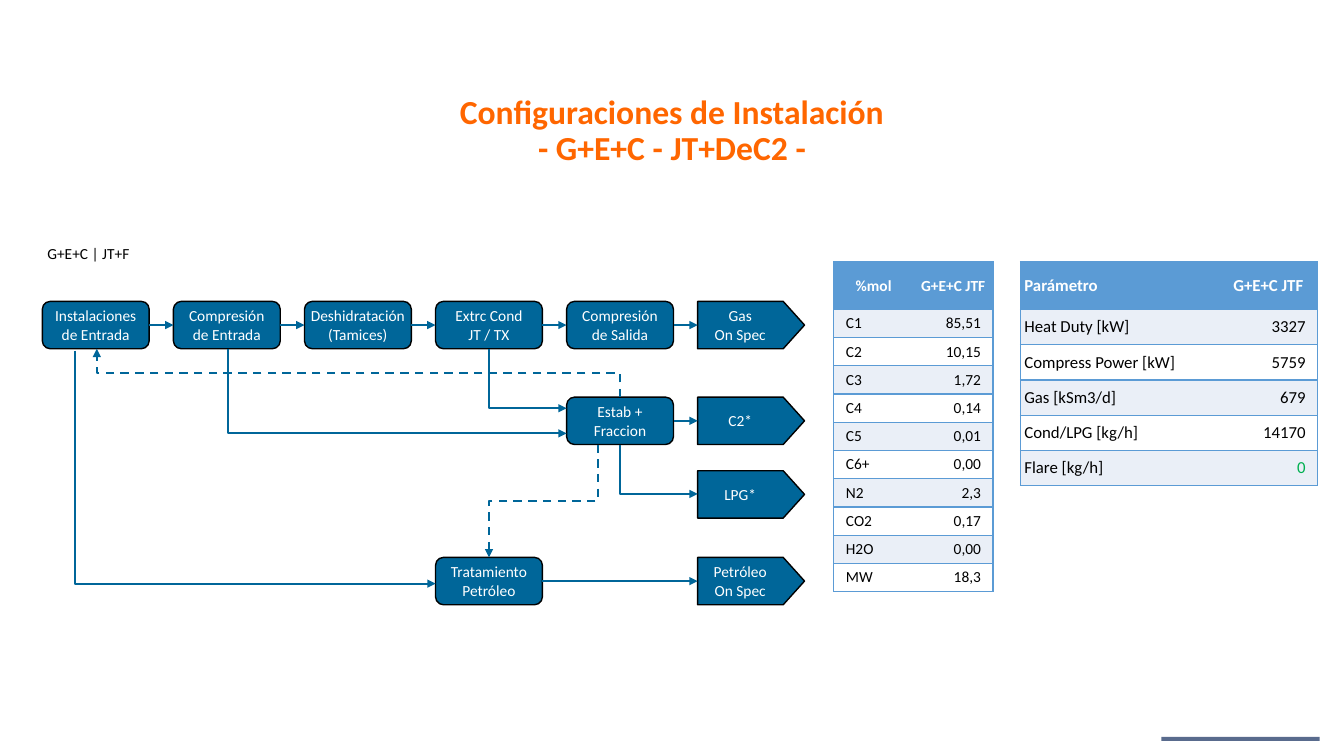
import dataclasses

import lxml.etree
import pptx
import pptx.dml.color
import pptx.enum.dml
import pptx.enum.shapes
import pptx.enum.text
import pptx.oxml.ns
import pptx.util

Inches = pptx.util.Inches
Pt = pptx.util.Pt
Shape = pptx.enum.shapes.MSO_SHAPE
Link = pptx.enum.shapes.MSO_CONNECTOR
Align = pptx.enum.text.PP_ALIGN
Anchor = pptx.enum.text.MSO_ANCHOR
qn = pptx.oxml.ns.qn


def rgb(code):
    return pptx.dml.color.RGBColor.from_string(code)


@dataclasses.dataclass(frozen=True)
class Theme:
    font: str = "Calibri"
    title: str = "FF6600"
    flow: str = "006699"
    edge: str = "000000"
    ink: str = "000000"
    paper: str = "FFFFFF"
    head: str = "5B9BD5"
    band: str = "EAEFF7"
    good: str = "00B050"
    bar: str = "001C50"
    big: int = 24
    mid: int = 12
    small: int = 11


THEME = Theme()
NO_GRID = "{2D5ABB26-0587-4C30-8999-92F81FD0307C}"
BOX_W, BOX_H = 1.06, 0.47
COLS = [0.42 + 1.3 * i for i in range(6)]
TOP = 2.99
PAD = 0.04

MOLAR = [("%mol", "G+E+C JTF"), ("C1", "85,51"), ("C2", "10,15"), ("C3", "1,72"),
         ("C4", "0,14"), ("C5", "0,01"), ("C6+", "0,00"), ("N2", "2,3"),
         ("CO2", "0,17"), ("H2O", "0,00"), ("MW", "18,3")]
PARAMS = [("Parámetro", "G+E+C JTF"), ("Heat Duty [kW]", "3327"),
          ("Compress Power [kW]", "5759"), ("Gas [kSm3/d]", "679"),
          ("Cond/LPG [kg/h]", "14170"), ("Flare [kg/h]", "0")]


def put(obj, vals):
    """Set each named attribute of obj."""
    for name, val in vals.items():
        setattr(obj, name, val)


def pads(left=PAD, top=PAD, right=PAD, base=PAD):
    return {"margin_left": Inches(left), "margin_top": Inches(top),
            "margin_right": Inches(right), "margin_bottom": Inches(base)}


def write(frame, text, size, color, align, bold=False, space=None):
    frame.text = text
    for para in frame.paragraphs:
        put(para, {"alignment": align, "line_spacing": space})
        for run in para.runs:
            put(run.font, {"name": THEME.font, "size": Pt(size), "bold": bold})
            run.font.color.rgb = rgb(color)


def paint(shape, color):
    shape.shadow.inherit = False
    shape.fill.solid()
    shape.fill.fore_color.rgb = rgb(color)


def title(slide, text):
    box = slide.shapes.add_textbox(Inches(0.76), Inches(0.91), Inches(11.81), Inches(0.79))
    put(box.text_frame, {"word_wrap": True, "vertical_anchor": Anchor.MIDDLE,
                         **pads(0.08, 0.04, 0.08, 0.04)})
    write(box.text_frame, text, THEME.big, THEME.title, Align.CENTER, True, 0.9)


def bar(slide):
    strip = slide.shapes.add_shape(Shape.RECTANGLE, Inches(11.52), Inches(7.31),
                                   Inches(1.57), Inches(0.04))
    paint(strip, THEME.bar)
    strip.line.fill.background()
    color = strip._element.spPr.find(".//" + qn("a:srgbClr"))
    lxml.etree.SubElement(color, qn("a:alpha"), val="65000")


def node(slide, kind, left, top, text, right=PAD):
    shape = slide.shapes.add_shape(kind, Inches(left), Inches(top),
                                   Inches(BOX_W), Inches(BOX_H))
    paint(shape, THEME.flow)
    shape.line.color.rgb = rgb(THEME.edge)
    shape.line.width = Pt(1)
    put(shape.text_frame, {"word_wrap": True, "vertical_anchor": Anchor.MIDDLE,
                           **pads(right=right)})
    write(shape.text_frame, text, THEME.small, THEME.paper, Align.CENTER)
    return shape


def step(slide, left, top, text):
    return node(slide, Shape.FLOWCHART_ALTERNATE_PROCESS, left, top, text)


def goal(slide, top, text):
    """Add a product tag that points right."""
    tag = node(slide, Shape.PENTAGON, COLS[5], top, text, 0.15)
    tag.adjustments[0] = 0.45
    return tag


def style(line, dash=False):
    line.line.color.rgb = rgb(THEME.flow)
    line.line.width = Pt(1.5)
    if dash:
        line.line.dash_style = pptx.enum.dml.MSO_LINE.DASH
    props = line._element.spPr
    lxml.etree.SubElement(props.find(qn("a:ln")), qn("a:tailEnd"), type="triangle")
    lxml.etree.SubElement(props, qn("a:effectLst"))


def arrow(slide, start, end):
    line = slide.shapes.add_connector(Link.STRAIGHT, 0, 0, 0, 0)
    line.begin_connect(start, 3)
    line.end_connect(end, 1)
    style(line)


def elbow(slide, x1, y1, x2, y2, dash=False):
    """Add an arrow that leaves vertically; a dashed one turns twice."""
    line = slide.shapes.add_connector(Link.ELBOW, 0, 0, 0, 0)
    wide, high = abs(y2 - y1), abs(x2 - x1)
    put(line, {"left": Inches((x1 + x2 - wide) / 2), "top": Inches((y1 + y2 - high) / 2),
               "width": Inches(wide), "height": Inches(high)})
    turns = {(True, True): {"rot": 270, "flipH": True},
             (True, False): {"rot": 90},
             (False, False): {"rot": 270, "flipV": True}}
    props = line._element.spPr
    put(props.xfrm, turns[y2 > y1, x2 > x1])
    if not dash:
        props.find(qn("a:prstGeom")).set("prst", "bentConnector2")
    style(line, dash)


def table(slide, left, top, cols, rows):
    frame = slide.shapes.add_table(len(rows), len(cols), Inches(left), Inches(top),
                                   Inches(sum(cols)), Inches(sum(rows)))
    grid = frame.table
    put(grid, {"first_row": False, "horz_banding": False})
    grid._tbl.tblPr.find(qn("a:tableStyleId")).text = NO_GRID
    for col, wide in zip(grid.columns, cols):
        col.width = Inches(wide)
    for row, high in zip(grid.rows, rows):
        row.height = Inches(high)
    return grid


def fill(cell, text, back, size, color, align, edge=PAD, right=PAD, bold=False, sides=""):
    for side in sides:
        line = lxml.etree.SubElement(cell._tc.get_or_add_tcPr(), qn("a:ln" + side),
                                     w=str(Pt(1)))
        solid = lxml.etree.SubElement(line, qn("a:solidFill"))
        lxml.etree.SubElement(solid, qn("a:srgbClr"), val=THEME.head)
    cell.fill.solid()
    cell.fill.fore_color.rgb = rgb(back)
    put(cell, {"vertical_anchor": Anchor.MIDDLE, **pads(left=edge, right=right)})
    write(cell.text_frame, text, size, color, align, bold)


def report(slide, left, cols, high, data, size, first, edge, marks=()):
    """Add a two-column table; first aligns its top left cell, marks are green rows."""
    grid = table(slide, left, 2.6, cols, [BOX_H] + [high] * (len(data) - 1))
    for r, row in enumerate(data):
        for c, text in enumerate(row):
            cell, sides = grid.cell(r, c), ("LTB", "RTB")[c]
            if r == 0:
                fill(cell, text, THEME.head, size, THEME.paper,
                     (first, Align.CENTER)[c], bold=True, sides=sides)
                continue
            fill(cell, text, THEME.band if r % 2 else THEME.paper, size,
                 THEME.good if c and r in marks else THEME.ink,
                 (Align.LEFT, Align.RIGHT)[c], edge, (edge, 0.12)[c], sides=sides)


def flow(slide):
    names = ["Instalaciones de Entrada", "Compresión de Entrada",
             "Deshidratación\v(Tamices)", "Extrc Cond\nJT / TX", "Compresión de Salida"]
    chain = [step(slide, x, TOP, name) for x, name in zip(COLS, names)]
    chain.append(goal(slide, TOP, "Gas\nOn Spec"))
    for pair in zip(chain, chain[1:]):
        arrow(slide, *pair)
    split = step(slide, COLS[4], 3.94, "Estab + Fraccion")
    arrow(slide, split, goal(slide, 3.94, "C2*"))
    goal(slide, 4.67, "LPG*")
    crude = step(slide, COLS[3], 5.53, "Tratamiento Petróleo")
    arrow(slide, crude, goal(slide, 5.53, "Petróleo\nOn Spec"))
    elbow(slide, 2.26, 3.46, 5.62, 4.3)
    elbow(slide, 4.85, 3.46, 5.62, 4.05)
    elbow(slide, 6.15, 4.41, 6.92, 4.9)
    elbow(slide, 0.74, 3.48, 4.32, 5.79)
    elbow(slide, 6.15, 3.94, 0.96, 3.46, True)
    elbow(slide, 5.93, 4.41, 4.85, 5.53, True)


def main():
    deck = pptx.Presentation()
    put(deck, {"slide_width": Inches(13.33), "slide_height": Inches(7.5)})
    slide = deck.slides.add_slide(deck.slide_layouts[6])
    bar(slide)
    title(slide, "Configuraciones de Instalación\v- G+E+C - JT+DeC2 -")
    label = table(slide, 0.43, 2.35, [2.36], [0.35])
    fill(label.cell(0, 0), "G+E+C | JT+F", THEME.paper, THEME.small, THEME.ink, Align.LEFT)
    flow(slide)
    report(slide, 8.27, [0.79, 0.79], 0.28, MOLAR, THEME.small, Align.CENTER, 0.12)
    report(slide, 10.12, [1.97, 0.98], 0.35, PARAMS, THEME.mid, Align.LEFT, PAD, marks=(5,))
    deck.save("out.pptx")


if __name__ == "__main__":
    main()
